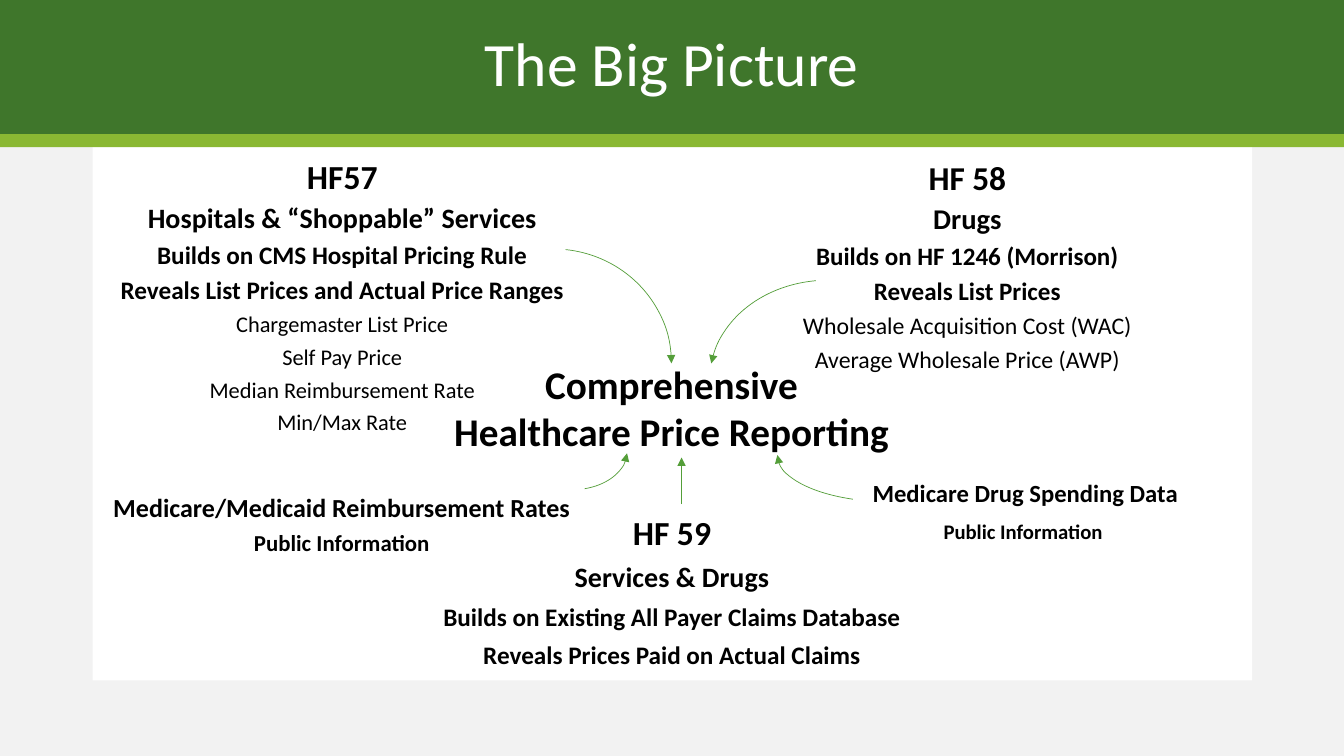
import collections
import pptx
import pptx.dml.color
import pptx.enum.shapes
import pptx.enum.text
import pptx.oxml
import pptx.oxml.ns
import pptx.util

PX = 9144  # 100 px to the inch
FONT = "Calibri"
BLACK, WHITE, ARROW_GREEN = "000000", "FFFFFF", "549E39"
SHAPE = pptx.enum.shapes.MSO_SHAPE
ANCHOR = pptx.enum.text.MSO_ANCHOR

Box = collections.namedtuple("Box", "left top width height")
Line = collections.namedtuple("Line", "text size bold")
Curve = collections.namedtuple("Curve", "box start end flips")


def color(value):
    return pptx.dml.color.RGBColor.from_string(value)


def emu(lengths):
    return [length * PX for length in lengths]


def add_bar(page, box, fill):
    bar = page.shapes.add_shape(SHAPE.RECTANGLE, *emu(box))
    bar.shadow.inherit = False
    bar.fill.solid()
    bar.fill.fore_color.rgb = color(fill)
    bar.line.fill.background()


def add_text(page, box, lines, spacing=1.0, before=0, anchor=ANCHOR.TOP,
             insets=(10, 5, 10, 5), ink=BLACK):
    frame = page.shapes.add_textbox(*emu(box)).text_frame
    frame.word_wrap = True
    frame.vertical_anchor = anchor
    (frame.margin_left, frame.margin_top,
     frame.margin_right, frame.margin_bottom) = emu(insets)
    frame.text = "\n".join(line.text for line in lines)
    for para, line in zip(frame.paragraphs, lines):
        para.alignment = pptx.enum.text.PP_ALIGN.CENTER
        para.line_spacing = spacing
        para.space_before = pptx.util.Pt(before)
        font = para.runs[0].font
        font.name = FONT
        font.size = pptx.util.Pt(line.size)
        font.bold = line.bold
        font.color.rgb = color(ink)


def style_arrow(arrow):
    arrow.line.color.rgb = color(ARROW_GREEN)
    arrow.line.width = pptx.util.Pt(0.5)
    outline = arrow.line._get_or_add_ln()
    head = pptx.oxml.parse_xml(
        '<a:tailEnd %s type="triangle"/>' % pptx.oxml.ns.nsdecls("a"))
    outline.append(head)


def add_header(page, box):
    stripe = 13
    add_bar(page, box, "3F762B")
    add_bar(page, Box(box.left, box.top + box.height, box.width, stripe), "8AB833")
    margin = 92
    title = Box(box.left + margin, box.top, box.width - 2 * margin, box.height)
    add_text(page, title, [Line("The Big Picture", 44, False)], spacing=0.9,
             anchor=ANCHOR.MIDDLE, insets=(0, 5, 0, 5), ink=WHITE)


def add_topic(page, box, lines, spacing, insets=(10, 5, 10, 5)):
    add_text(page, box, lines, spacing, before=10, insets=insets)


def add_center(page, box):
    lines = [Line(text, 28, True)
             for text in ("Comprehensive", "Healthcare Price Reporting")]
    add_text(page, box, lines, anchor=ANCHOR.MIDDLE)


def add_curve(page, curve):
    arc = page.shapes.add_shape(SHAPE.ARC, *emu(curve.box))
    arc.shadow.inherit = False
    arc.fill.background()
    # Angles are in degrees; one adjustment unit is 1/0.6 degree
    arc.adjustments[0] = curve.start * 0.6
    arc.adjustments[1] = curve.end * 0.6
    for flip in curve.flips:
        arc._element.spPr.xfrm.set("flip" + flip, "1")
    style_arrow(arc)


def add_upward_arrow(page, box):
    arrow = page.shapes.add_connector(
        pptx.enum.shapes.MSO_CONNECTOR.STRAIGHT,
        *emu((box.left, box.top + box.height, box.left + box.width, box.top)))
    style_arrow(arrow)
    arrow._element.spPr.append(pptx.oxml.parse_xml(
        "<a:effectLst %s/>" % pptx.oxml.ns.nsdecls("a")))


HOSPITALS = [
    Line("HF57", 24, True),
    Line("Hospitals & “Shoppable” Services", 20, True),
    Line("Builds on CMS Hospital Pricing Rule", 18, True),
    Line("Reveals List Prices and Actual Price Ranges", 18, True),
    Line("Chargemaster List Price", 16, False),
    Line("Self Pay Price", 16, False),
    Line("Median Reimbursement Rate", 16, False),
    Line("Min/Max Rate", 16, False),
]
DRUGS = [
    Line("HF 58", 23.8, True),
    Line("Drugs", 20.4, True),
    Line("Builds on HF 1246 (Morrison)", 17.9, True),
    Line("Reveals List Prices", 17.9, True),
    Line("Wholesale Acquisition Cost (WAC)", 17, False),
    Line("Average Wholesale Price (AWP)", 17, False),
]
CLAIMS = [
    Line("HF 59", 24, True),
    Line("Services & Drugs", 20, True),
    Line("Builds on Existing All Payer Claims Database", 18, True),
    Line("Reveals Prices Paid on Actual Claims", 18, True),
]
REIMBURSEMENT = [
    Line("Medicare/Medicaid Reimbursement Rates", 18.6, True),
    Line("Public Information", 16.3, True),
]
SPENDING = [
    Line("Medicare Drug Spending Data", 17.6, True),
    Line("Public Information ", 14.8, True),
]
CURVES = [
    Curve(Box(431, 247, 235, 227), 276.32, 0, ""),
    Curve(Box(704, 278, 235, 196), 277.2, 352.45, "H"),
    Curve(Box(771, 405, 225, 93), 310.67, 0, "HV"),
    Curve(Box(512, 410, 110, 76), 289.32, 358.17, "V"),
]


def main():
    deck = pptx.Presentation()
    deck.slide_width, deck.slide_height = emu((1333, 750))
    page = deck.slides.add_slide(deck.slide_layouts[6])
    page.background.fill.solid()
    page.background.fill.fore_color.rgb = color("F2F2F2")

    # White panel and title band
    add_bar(page, Box(92, 146, 1150, 529), WHITE)
    add_header(page, Box(0, 0, 1333, 133))

    # Bills and public data around the goal
    add_topic(page, Box(91, 133, 497, 332), HOSPITALS, 0.7, insets=(20, 33, 20, 5))
    add_topic(page, Box(676, 162, 567, 223), DRUGS, 0.7)
    add_topic(page, Box(383, 511, 567, 165), CLAIMS, 0.8)
    add_topic(page, Box(95, 491, 488, 88), REIMBURSEMENT, 0.7)
    add_topic(page, Box(850, 472, 334, 88), SPENDING, 0.9)
    add_center(page, Box(91, 162, 1150, 485))

    # Arrows towards the goal
    for curve in CURVES:
        add_curve(page, curve)
    add_upward_arrow(page, Box(676, 454, 0, 46))

    deck.save("out.pptx")


if __name__ == "__main__":
    main()
